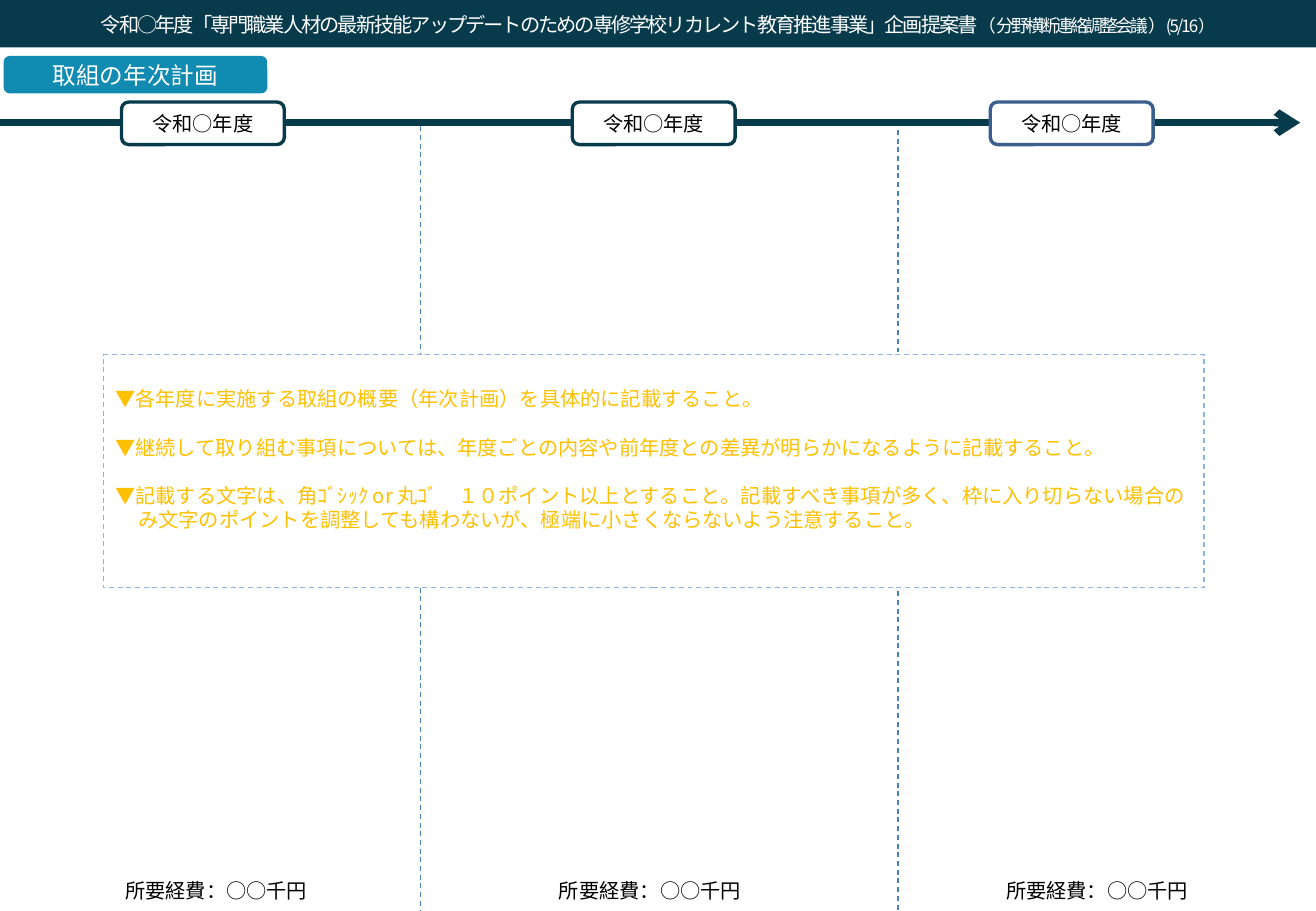
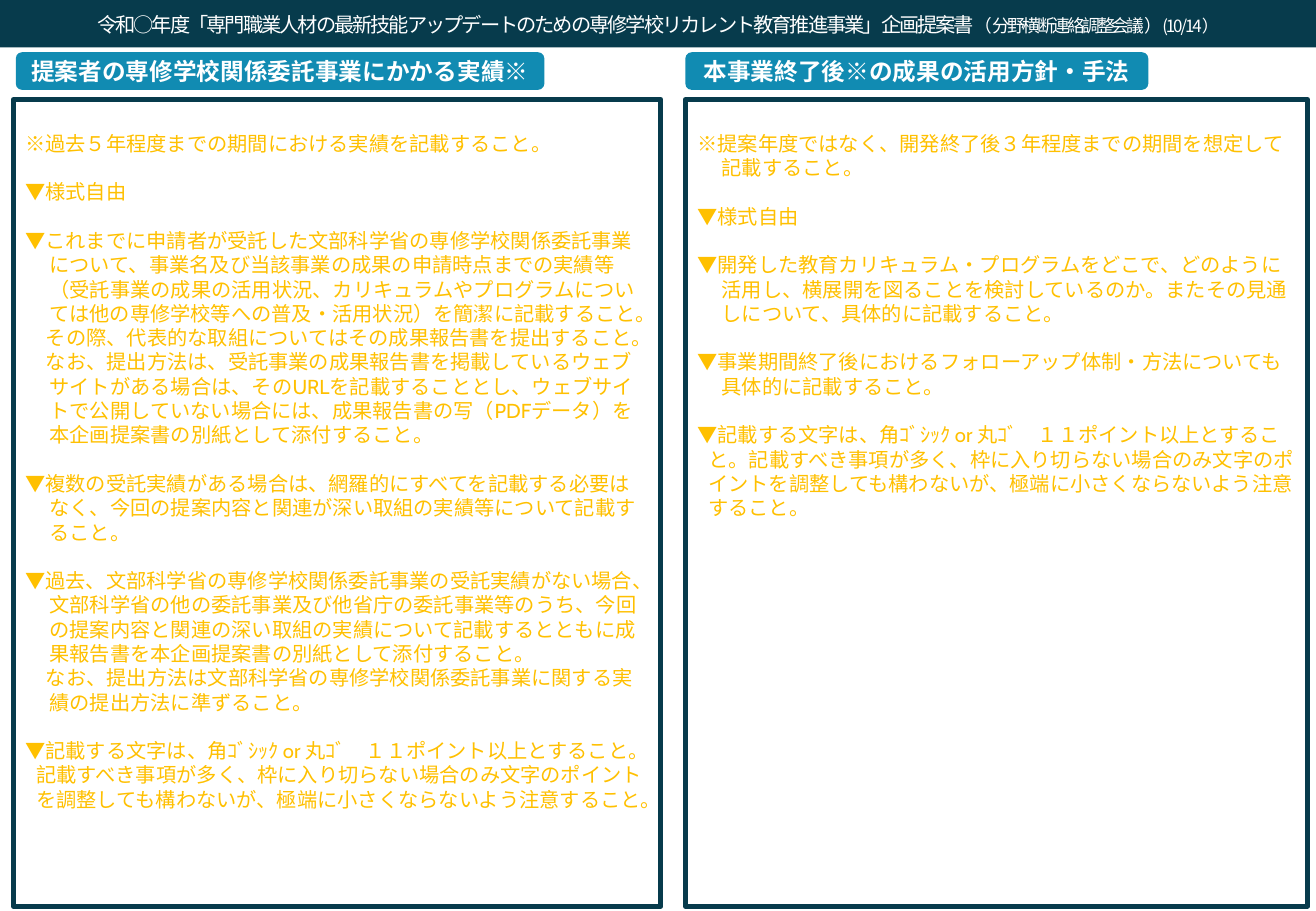
import pptx
import pptx.dml.color
import pptx.enum.dml
import pptx.enum.shapes
import pptx.enum.text
import pptx.oxml
import pptx.oxml.ns
import pptx.util
from collections import namedtuple

Inches = pptx.util.Inches
Pt = pptx.util.Pt
Shape = pptx.enum.shapes.MSO_SHAPE
Align = pptx.enum.text.PP_ALIGN
Anchor = pptx.enum.text.MSO_ANCHOR

WIDTH, HEIGHT = 10.83, 7.5
NAVY, TEAL, WHITE, BLACK = "073B4C", "118BB2", "FFFFFF", "000000"
AMBER, STEEL, BLUE, PALE = "FFC000", "3A5F8C", "4B7EBC", "8EB4E3"
NOTO, CABIN = "Noto Sans CJK JP", "Cabin"
LINE_RATIO = 1.2
NOTE_SIZE = 12
NOTE_TOP = 0.26

Run = namedtuple("Run", "text size font color bold spacing", defaults=(12, NOTO, BLACK, False, None))
Note = namedtuple("Note", "runs left hang gap", defaults=(0, 0, True))


def color(value):
    return pptx.dml.color.RGBColor.from_string(value)


def add_run(para, run):
    span = para.add_run()
    span.text = run.text
    span.font.size = Pt(run.size)
    span.font.name = run.font
    span.font.bold = run.bold
    span.font.color.rgb = color(run.color)
    properties = span.font._element
    east_asian = pptx.oxml.parse_xml(
        f'<a:ea {pptx.oxml.ns.nsdecls("a")} typeface="{NOTO}"/>')
    properties.find(pptx.oxml.ns.qn("a:latin")).addnext(east_asian)
    if run.spacing is not None:
        properties.set("spc", str(round(run.spacing * 100)))


def fill_para(para, runs, align):
    para.alignment = align
    para.line_spacing = Pt(LINE_RATIO * max(run.size for run in runs))
    for run in runs:
        add_run(para, run)


def add_text(shapes, place, runs):
    box = shapes.add_textbox(*map(Inches, place))
    box.text_frame.word_wrap = True
    fill_para(box.text_frame.paragraphs[0], runs, Align.CENTER)


def add_block(shapes, kind, place, fill=None, line=None, weight=1, dashed=False):
    block = shapes.add_shape(kind, *map(Inches, place))
    block.shadow.inherit = False
    if fill:
        block.fill.solid()
        block.fill.fore_color.rgb = color(fill)
    else:
        block.fill.background()
    if line:
        style_line(block.line, line, weight, dashed)
    else:
        block.line.fill.background()
    return block


def style_line(line, value, weight, dashed):
    line.color.rgb = color(value)
    line.width = Pt(weight)
    if dashed:
        line.dash_style = pptx.enum.dml.MSO_LINE.DASH


def add_line(page, start, end, value, weight, dashed=False, arrow=False):
    line = page.shapes.add_connector(
        pptx.enum.shapes.MSO_CONNECTOR.STRAIGHT, *map(Inches, start + end))
    style_line(line.line, value, weight, dashed)
    namespace = pptx.oxml.ns.nsdecls("a")
    if arrow:
        line.line._get_or_add_ln().append(
            pptx.oxml.parse_xml(f'<a:tailEnd {namespace} type="arrow"/>'))
    line._element.spPr.append(pptx.oxml.parse_xml(f"<a:effectLst {namespace}/>"))


def add_label(page, place, run, fill, line=None):
    label = add_block(page.shapes, Shape.ROUNDED_RECTANGLE, place, fill, line, 2)
    label.text_frame.word_wrap = True
    label.text_frame.vertical_anchor = Anchor.MIDDLE
    fill_para(label.text_frame.paragraphs[0], [run], Align.CENTER)


def add_notes(page, place, notes, **style):
    frame = add_block(page.shapes, Shape.RECTANGLE, place, **style).text_frame
    frame.word_wrap = True
    frame.vertical_anchor = Anchor.TOP
    frame.margin_top = Inches(NOTE_TOP)
    for index, note in enumerate(notes):
        para = frame.add_paragraph() if index else frame.paragraphs[0]
        fill_para(para, note.runs, Align.LEFT)
        if index and note.gap:
            para.space_before = Pt(LINE_RATIO * NOTE_SIZE)
        properties = para._p.get_or_add_pPr()
        properties.set("marL", str(Inches(note.left)))
        properties.set("indent", str(-Inches(note.hang)))


def note(text, left=0.2, hang=0.2, gap=True, font=CABIN):
    return Note([Run(text, NOTE_SIZE, font, AMBER)], left, hang, gap)


def continued(text):
    return note(text, hang=0.03, gap=False)


def size_note(points, left, fonts):
    texts = (
        f"▼記載する文字は、角ｺﾞｼｯｸ or 丸ｺﾞ　{points}ポイント以上とすること。",
        "記載すべき事項",
        "が多く、枠に入り切らない場合のみ文字のポイントを調整しても構わないが、極端に小さくならないよう注意すること。",
    )
    runs = [Run(text, NOTE_SIZE, font, AMBER) for text, font in zip(texts, fonts)]
    return Note(runs, left, left)


def add_header(page, number):
    group = page.shapes.add_group_shape()
    add_block(group.shapes, Shape.RECTANGLE, (0, 0, WIDTH, 0.39), NAVY)
    pieces = (
        ("令和○年度「専門職業人材の最新技能アップデートのための専修学校リカレント教育推進事業」企画提案書", 12, -1.2),
        ("（", 10.5, -1.2),
        ("分野横断連絡調整会議", 10.5, -1.6),
        ("）", 10.5, -1.2),
        (f"({number}）", 10, -1.2),
    )
    runs = [Run(text, size, NOTO, WHITE, spacing=spacing) for text, size, spacing in pieces]
    add_text(group.shapes, (0.5, 0.05, 9.83, 0.3), runs)


def build_yearly_plan(page):
    add_label(page, (0.03, 0.46, 2.17, 0.31), Run("取組の年次計画", 14, NOTO, WHITE), TEAL)
    for left in (0.03, 3.6, 7.28):
        add_text(page.shapes, (left, 7.18, 3.5, 0.3), [Run("所要経費：○○千円")])
    add_line(page, (0, 1.01), (10.7, 1.01), NAVY, 4.5, arrow=True)
    for left, outline in ((1, NAVY), (4.71, NAVY), (8.15, STEEL)):
        add_label(page, (left, 0.84, 1.34, 0.35), Run("令和○年度", font=CABIN), WHITE, outline)
    for x, top in ((3.46, 1.04), (7.39, 1.07)):
        add_line(page, (x, top), (x, HEIGHT), BLUE, 0.75, dashed=True)
    add_notes(page, (0.85, 2.92, 9.06, 1.92), [
        note("▼各年度に実施する取組の概要（年次計画）を具体的に記載すること。", 0, 0, font=NOTO),
        note("▼継続して取り組む事項については、年度ごとの内容や前年度との差異が明らかになるように記載すること。", 0, 0, font=NOTO),
        size_note("１０", 0.19, (NOTO, NOTO, NOTO)),
    ], fill=WHITE, line=PALE, weight=0.75, dashed=True)
    add_header(page, "5/16")


def build_results(page):
    free_style = note("▼様式自由", 0, 0)
    closing = size_note("１１", 0.09, (CABIN, NOTO, CABIN))
    record = [
        note("※過去５年程度までの期間における実績を記載すること。", 0, 0),
        free_style,
        note("▼これまでに申請者が受託した文部科学省の専修学校関係委託事業について、事業名及び当該事業の成果の申請時点までの実績等（受託事業の成果の活用状況、カリキュラムやプログラムについては他の専修学校等への普及・活用状況）を簡潔に記載すること。"),
        continued("その際、代表的な取組についてはその成果報告書を提出すること。"),
        continued("なお、提出方法は、受託事業の成果報告書を掲載しているウェブサイトがある場合は、そのURLを記載することとし、ウェブサイトで公開していない場合には、成果報告書の写（PDFデータ）を本企画提案書の別紙として添付すること。"),
        note("▼複数の受託実績がある場合は、網羅的にすべてを記載する必要はなく、今回の提案内容と関連が深い取組の実績等について記載すること。"),
        note("▼過去、文部科学省の専修学校関係委託事業の受託実績がない場合、文部科学省の他の委託事業及び他省庁の委託事業等のうち、今回の提案内容と関連の深い取組の実績について記載するとともに成果報告書を本企画提案書の別紙として添付すること。"),
        continued("なお、提出方法は文部科学省の専修学校関係委託事業に関する実績の提出方法に準ずること。"),
        closing,
    ]
    policy = [
        note("※提案年度ではなく、開発終了後３年程度までの期間を想定して記載すること。"),
        free_style,
        note("▼開発した教育カリキュラム・プログラムをどこで、どのように活用し、横展開を図ることを検討しているのか。またその見通しについて、具体的に記載すること。"),
        note("▼事業期間終了後におけるフォローアップ体制・方法についても具体的に記載すること。"),
        closing,
    ]
    columns = (
        ("提案者の専修学校関係委託事業にかかる実績※", 0.13, 4.35, 0.11, 5.33, record),
        ("本事業終了後※の成果の活用方針・手法", 5.64, 3.81, 5.64, 5.12, policy),
    )
    for title, label_left, label_width, left, width, notes in columns:
        add_label(page, (label_left, 0.43, label_width, 0.31),
                  Run(title, 14, CABIN, WHITE, True), TEAL)
        add_notes(page, (left, 0.82, width, 6.64), notes, line=NAVY, weight=3)
    add_header(page, "10/14")


def main():
    deck = pptx.Presentation()
    deck.slide_width, deck.slide_height = Inches(WIDTH), Inches(HEIGHT)
    for build in (build_yearly_plan, build_results):
        build(deck.slides.add_slide(deck.slide_layouts[6]))
    deck.save("out.pptx")


if __name__ == "__main__":
    main()
